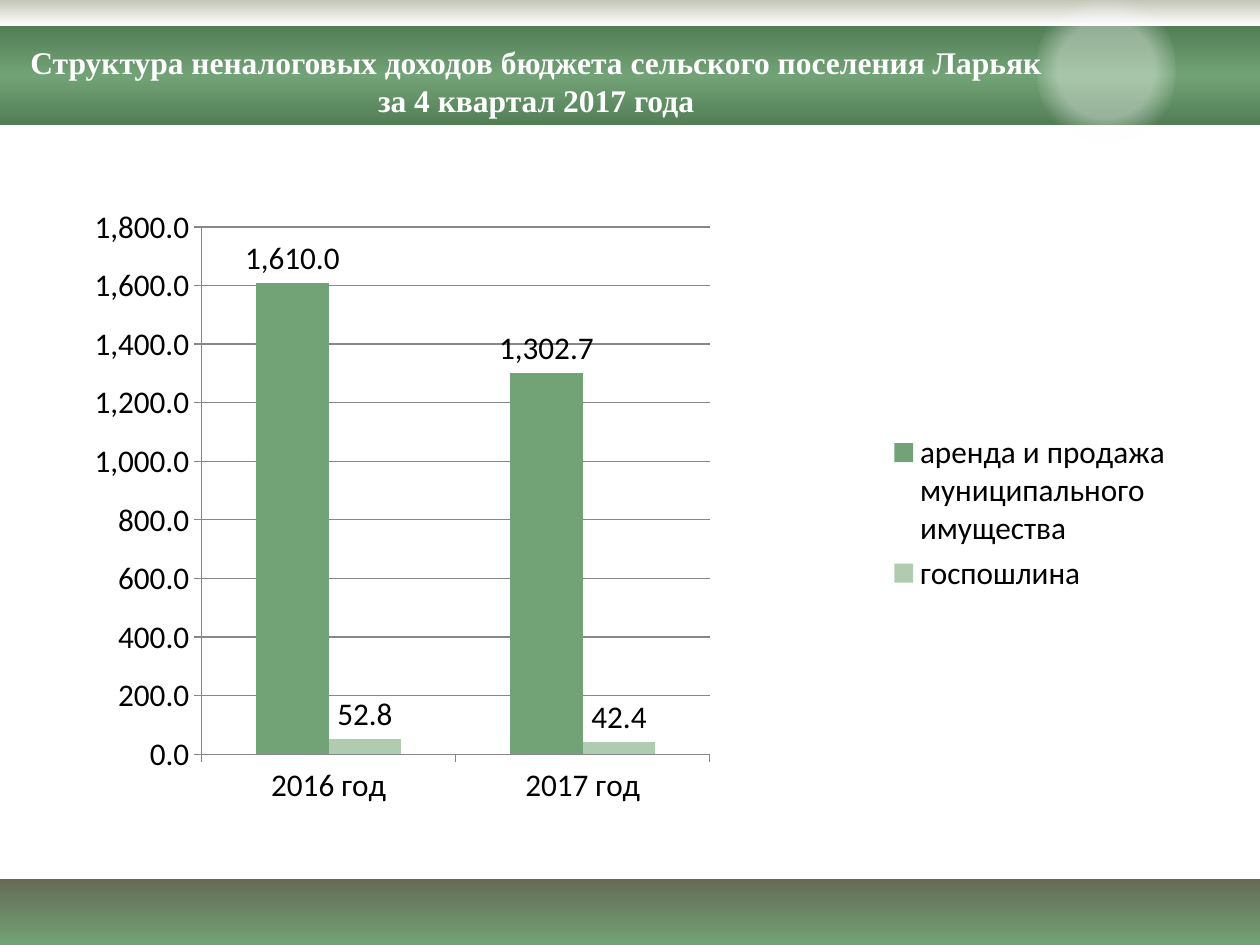
from dataclasses import dataclass

from pptx import Presentation
from pptx.chart.data import CategoryChartData
from pptx.chart.series import BarSeries
from pptx.dml.color import RGBColor
from pptx.enum.chart import XL_CHART_TYPE, XL_LABEL_POSITION, XL_LEGEND_POSITION, XL_TICK_MARK
from pptx.enum.shapes import MSO_SHAPE
from pptx.enum.text import MSO_AUTO_SIZE, PP_ALIGN
from pptx.oxml import parse_xml
from pptx.oxml.ns import nsdecls, qn
from pptx.slide import Slide
from pptx.util import Pt

WHITE = RGBColor(0xFF, 0xFF, 0xFF)
BLACK = RGBColor(0x00, 0x00, 0x00)
GREEN = RGBColor(0x72, 0xA3, 0x76)
DARK_GREEN = RGBColor(0x52, 0x7E, 0x56)
PALE_GREEN = RGBColor(0xB0, 0xCC, 0xB0)
OLIVE = RGBColor(0x67, 0x6A, 0x55)
PALE_OLIVE = RGBColor(0xC4, 0xC6, 0xB8)
AXIS_GREY = RGBColor(0x87, 0x87, 0x87)

LINEAR = '<a:lin ang="5400000" scaled="0"/>'
RADIAL = '<a:path path="circle"><a:fillToRect l="50000" t="50000" r="50000" b="50000"/></a:path>'


@dataclass(frozen=True)
class Stop:
    """A gradient stop, with position and opacity in percent."""
    position: int
    color: RGBColor
    opacity: int = 100


@dataclass(frozen=True)
class Decoration:
    """A gradient-filled shape, with its box in points."""
    geometry: MSO_SHAPE
    left: float
    top: float
    width: float
    height: float
    stops: tuple[Stop, ...]
    direction: str = LINEAR


@dataclass(frozen=True)
class Revenue:
    """A kind of non-tax revenue by year."""
    name: str
    amounts: tuple[float, ...]
    color: RGBColor


DECORATIONS = (
    Decoration(MSO_SHAPE.RECTANGLE, 0, 502.5, 720, 37.5, (Stop(0, OLIVE), Stop(100, GREEN))),
    Decoration(MSO_SHAPE.RECTANGLE, 0, 0, 720, 15, (Stop(0, PALE_OLIVE), Stop(100, WHITE))),
    Decoration(MSO_SHAPE.RECTANGLE, 0, 15, 720, 56.5,
               (Stop(0, DARK_GREEN), Stop(50, GREEN), Stop(100, DARK_GREEN))),
    Decoration(MSO_SHAPE.OVAL, 592.5, -8, 79.2, 96.5,
               (Stop(44, WHITE, 38), Stop(67, WHITE, 0)), RADIAL),
)
YEARS = ("2016 год", "2017 год")
REVENUES = (
    Revenue("аренда и продажа муниципального имущества", (1610, 1302.7), GREEN),
    Revenue("госпошлина", (52.8, 42.4), PALE_GREEN),
)
AMOUNT_FORMAT = "#,##0.0"


def draw_decoration(slide: Slide, item: Decoration) -> None:
    """Draw a shape with a gradient fill and no outline."""
    shape = slide.shapes.add_shape(
        item.geometry, Pt(item.left), Pt(item.top), Pt(item.width), Pt(item.height))
    shape.shadow.inherit = False
    stops = "".join(
        f'<a:gs pos="{stop.position * 1000}"><a:srgbClr val="{stop.color}">'
        f'<a:alpha val="{stop.opacity * 1000}"/></a:srgbClr></a:gs>' for stop in item.stops)
    gradient = parse_xml(
        f'<a:gradFill {nsdecls("a")} rotWithShape="1"><a:gsLst>{stops}</a:gsLst>'
        f'{item.direction}</a:gradFill>')
    shape.element.spPr.find(qn("a:prstGeom")).addnext(gradient)
    shape.line.fill.background()


def draw_title(slide: Slide) -> None:
    """Write the heading over the green band."""
    title = slide.shapes.add_textbox(Pt(8.64), Pt(21), Pt(595.5), Pt(72.7))
    frame = title.text_frame
    frame.word_wrap = True
    frame.auto_size = MSO_AUTO_SIZE.SHAPE_TO_FIT_TEXT
    heading = frame.paragraphs[0]
    heading.alignment = PP_ALIGN.CENTER
    run = heading.add_run()
    run.text = ("Структура неналоговых доходов бюджета сельского поселения Ларьяк "
                "за 4 квартал 2017 года")
    run.font.name = "Times New Roman"
    run.font.size = Pt(18)
    run.font.bold = True
    run.font.color.rgb = WHITE


def format_series(series: BarSeries, color: RGBColor) -> None:
    """Colour a series and show its values above the columns."""
    series.format.fill.solid()
    series.format.fill.fore_color.rgb = color
    series.invert_if_negative = False
    labels = series.data_labels
    labels.show_value = True
    labels.number_format = AMOUNT_FORMAT
    labels.number_format_is_linked = False
    labels.position = XL_LABEL_POSITION.OUTSIDE_END


def draw_revenue_chart(slide: Slide) -> None:
    """Draw the clustered columns of revenue by year."""
    data = CategoryChartData(number_format=AMOUNT_FORMAT)
    data.categories = YEARS
    for revenue in REVENUES:
        data.add_series(revenue.name, revenue.amounts)
    chart = slide.shapes.add_chart(
        XL_CHART_TYPE.COLUMN_CLUSTERED, Pt(54), Pt(111.6), Pt(623.5), Pt(363), data).chart
    chart.has_title = False
    chart.font.name = "Calibri"
    chart.font.size = Pt(18)
    chart.font.color.rgb = BLACK
    chart.has_legend = True
    chart.legend.position = XL_LEGEND_POSITION.RIGHT
    chart.legend.include_in_layout = False

    plot = chart.plots[0]
    plot.gap_width = 150
    plot.overlap = 0
    plot.vary_by_categories = False
    for series, revenue in zip(plot.series, REVENUES):
        format_series(series, revenue.color)

    amounts = chart.value_axis
    amounts.minimum_scale, amounts.maximum_scale, amounts.major_unit = 0, 1800, 200
    amounts.tick_labels.number_format = AMOUNT_FORMAT
    amounts.tick_labels.number_format_is_linked = False
    amounts.has_major_gridlines = True
    for axis in (amounts, chart.category_axis):
        axis.major_tick_mark = XL_TICK_MARK.OUTSIDE
    for part in (amounts, chart.category_axis, amounts.major_gridlines):
        part.format.line.color.rgb = AXIS_GREY
        part.format.line.width = Pt(0.75)

    plot_area = chart.element.find(f'{qn("c:chart")}/{qn("c:plotArea")}')
    for layout in plot_area.findall(qn("c:layout")):
        plot_area.remove(layout)
    box = "".join(f'<c:{key} val="{value}"/>' for key, value in (
        ("layoutTarget", "inner"), ("xMode", "edge"), ("yMode", "edge"),
        ("x", 0.09), ("y", 0.05), ("w", 0.47), ("h", 0.83)))
    plot_area.insert(0, parse_xml(
        f'<c:layout {nsdecls("c")}><c:manualLayout>{box}</c:manualLayout></c:layout>'))


def main() -> None:
    """Build the slide and save it."""
    presentation = Presentation()
    presentation.slide_width, presentation.slide_height = Pt(720), Pt(540)
    slide = presentation.slides.add_slide(presentation.slide_layouts[6])
    for item in DECORATIONS:
        draw_decoration(slide, item)
    draw_title(slide)
    draw_revenue_chart(slide)
    presentation.save("out.pptx")


if __name__ == "__main__":
    main()
